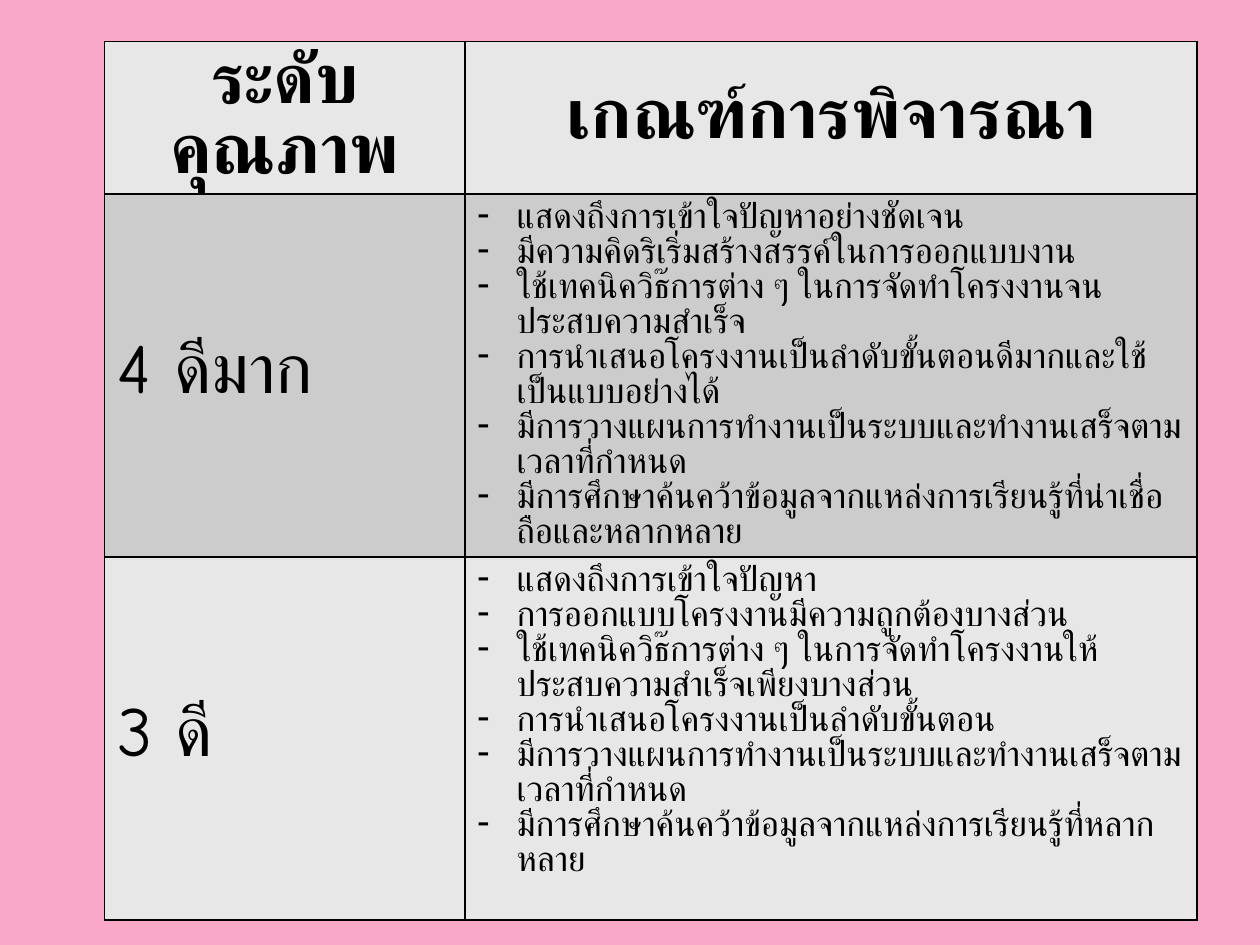
import pptx
import pptx.dml.color
import pptx.enum.text
import pptx.oxml
import pptx.oxml.ns
import pptx.util
from pptx.util import Inches

FONT = "Comic Neue"
BLACK = "000000"
LIGHT_GREY = "E7E7E7"
MID_GREY = "CCCCCC"
PINK = "FAA8C7"
NAMESPACE = pptx.oxml.ns.nsdecls("a")


def color(hex_string):
    return pptx.dml.color.RGBColor.from_string(hex_string)


def add_text(paragraph, text, size, bold=False):
    """Add one run, with the line height fixed at the text size."""
    paragraph.line_spacing = pptx.util.Pt(size)
    run = paragraph.add_run()
    run.text = text
    run.font.size = pptx.util.Pt(size)
    run.font.bold = bold
    run.font.name = FONT
    run.font.color.rgb = color(BLACK)


headings = ["ระดับคุณภาพ", "เกณฑ์การพิจารณา"]
levels = [
    ("4 ดีมาก", [
        "แสดงถึงการเข้าใจปัญหาอย่างชัดเจน",
        "มีความคิดริเริ่มสร้างสรรค์ในการออกแบบงาน",
        "ใช้เทคนิควิธ๊การต่าง ๆ ในการจัดทำโครงงานจนประสบความสำเร็จ",
        "การนำเสนอโครงงานเป็นลำดับขั้นตอนดีมากและใช้เป็นแบบอย่างได้",
        "มีการวางแผนการทำงานเป็นระบบและทำงานเสร็จตามเวลาที่กำหนด",
        "มีการศึกษาค้นคว้าข้อมูลจากแหล่งการเรียนรู้ที่น่าเชื่อถือและหลากหลาย",
    ]),
    ("3 ดี", [
        "แสดงถึงการเข้าใจปัญหา",
        "การออกแบบโครงงานมีความถูกต้องบางส่วน",
        "ใช้เทคนิควิธ๊การต่าง ๆ ในการจัดทำโครงงานให้ประสบความสำเร็จเพียงบางส่วน",
        "การนำเสนอโครงงานเป็นลำดับขั้นตอน",
        "มีการวางแผนการทำงานเป็นระบบและทำงานเสร็จตามเวลาที่กำหนด",
        "มีการศึกษาค้นคว้าข้อมูลจากแหล่งการเรียนรู้ที่หลากหลาย",
    ]),
]
column_widths = [2.86, 5.81]
row_heights = [1.21, 2.88, 2.88]
row_fills = [LIGHT_GREY, MID_GREY, LIGHT_GREY]

presentation = pptx.Presentation()
presentation.slide_width = Inches(10)
presentation.slide_height = Inches(7.5)
slide = presentation.slides.add_slide(presentation.slide_layouts[6])
slide.background.fill.solid()
slide.background.fill.fore_color.rgb = color(PINK)

table = slide.shapes.add_table(
    len(row_heights), len(column_widths), Inches(0.83), Inches(0.33),
    Inches(sum(column_widths)), Inches(sum(row_heights))).table
for column, width in zip(table.columns, column_widths):
    column.width = Inches(width)

for row, height, fill in zip(table.rows, row_heights, row_fills):
    row.height = Inches(height)
    for cell in row.cells:
        cell.vertical_anchor = pptx.enum.text.MSO_ANCHOR.MIDDLE
        properties = cell._tc.get_or_add_tcPr()
        for side in ("lnL", "lnR", "lnT", "lnB"):
            properties.append(pptx.oxml.parse_xml(
                f'<a:{side} {NAMESPACE} w="{pptx.util.Pt(1)}"><a:solidFill>'
                f'<a:srgbClr val="{BLACK}"/></a:solidFill></a:{side}>'))
        cell.fill.solid()
        cell.fill.fore_color.rgb = color(fill)

for column_index, heading in enumerate(headings):
    paragraph = table.cell(0, column_index).text_frame.paragraphs[0]
    paragraph.alignment = pptx.enum.text.PP_ALIGN.CENTER
    add_text(paragraph, heading, 40, bold=True)

for row_index, (level, criteria) in enumerate(levels, start=1):
    add_text(table.cell(row_index, 0).text_frame.paragraphs[0], level, 40)
    criteria_cell = table.cell(row_index, 1)
    criteria_cell.vertical_anchor = pptx.enum.text.MSO_ANCHOR.TOP
    frame = criteria_cell.text_frame
    for criterion_index, criterion in enumerate(criteria):
        paragraph = frame.paragraphs[0] if criterion_index == 0 else frame.add_paragraph()
        add_text(paragraph, criterion, 20)
        properties = paragraph._p.get_or_add_pPr()
        properties.set("marL", str(Inches(0.31)))
        properties.set("indent", str(-Inches(0.31)))
        properties.append(pptx.oxml.parse_xml(f'<a:buChar {NAMESPACE} char="-"/>'))

presentation.save("out.pptx")
